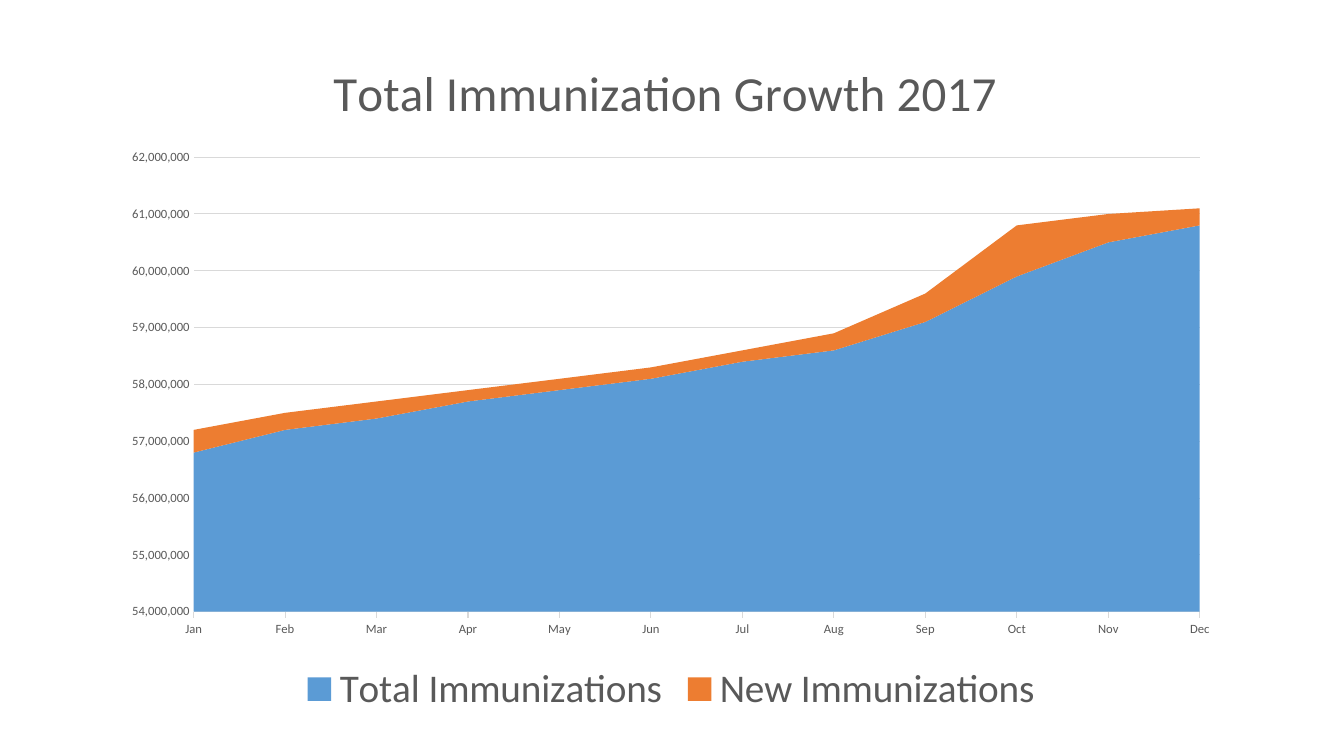
from lxml import etree
from pptx import Presentation
from pptx.chart.data import CategoryChartData
from pptx.dml.color import RGBColor
from pptx.enum.chart import XL_CHART_TYPE, XL_LEGEND_POSITION, XL_TICK_MARK
from pptx.oxml.ns import qn
from pptx.util import Inches, Pt

AREA_STACKED = XL_CHART_TYPE.AREA_STACKED
LEGEND_BOTTOM = XL_LEGEND_POSITION.BOTTOM
TICK_OUTSIDE, TICK_NONE = XL_TICK_MARK.OUTSIDE, XL_TICK_MARK.NONE

COLORS = {"text": "595959", "line": "D9D9D9", "total": "5B9BD5", "new": "ED7D31"}
MILLION = 1_000_000
CHART_WIDTH, CHART_HEIGHT = 11.13, 6.69

MONTHS = ["Jan", "Feb", "Mar", "Apr", "May", "Jun",
          "Jul", "Aug", "Sep", "Oct", "Nov", "Dec"]
# Name, colour and monthly values in millions
SERIES = [
    ("Total Immunizations", "total",
     [56.8, 57.2, 57.4, 57.7, 57.9, 58.1, 58.4, 58.6, 59.1, 59.9, 60.5, 60.8]),
    ("New Immunizations", "new",
     [0.4, 0.3, 0.3, 0.2, 0.2, 0.2, 0.2, 0.3, 0.5, 0.9, 0.5, 0.3]),
]


def style_font(font, size):
    font.name = "Calibri"
    font.size = Pt(size)
    font.bold = False
    font.color.rgb = RGBColor.from_string(COLORS["text"])


def place_part(part, index, settings):
    """Give a chart part a manual layout, as child number index."""
    for old_layout in part.findall(qn("c:layout")):
        part.remove(old_layout)
    layout = etree.Element(qn("c:layout"))
    manual_layout = etree.SubElement(layout, qn("c:manualLayout"))
    for tag, value in settings.items():
        etree.SubElement(manual_layout, qn(f"c:{tag}")).set("val", str(value))
    part.insert(index, layout)


presentation = Presentation()
presentation.slide_width = Inches(13.33)
presentation.slide_height = Inches(7.5)
slide = presentation.slides.add_slide(presentation.slide_layouts[6])

# Stacked area chart
chart_data = CategoryChartData(number_format="#,##0")
chart_data.categories = MONTHS
for name, color, millions in SERIES:
    chart_data.add_series(name, [round(value * MILLION) for value in millions])
chart = slide.shapes.add_chart(
    AREA_STACKED, Inches(1.09), Inches(0.46),
    Inches(CHART_WIDTH), Inches(CHART_HEIGHT), chart_data
).chart
style_font(chart.font, 10)
plot = chart.plots[0]
plot.vary_by_categories = False
for series, (name, color, millions) in zip(plot.series, SERIES):
    series.format.fill.solid()
    series.format.fill.fore_color.rgb = RGBColor.from_string(COLORS[color])
    series.format.line.fill.background()

# Title
chart.has_title = True
title_run = chart.chart_title.text_frame.paragraphs[0].add_run()
title_run.text = "Total Immunization Growth 2017"
style_font(title_run.font, 35)

# Legend
chart.has_legend = True
chart.legend.position = LEGEND_BOTTOM
chart.legend.include_in_layout = False
style_font(chart.legend.font, 28)

# Month axis
month_axis = chart.category_axis
month_axis.has_major_gridlines = False
month_axis.major_tick_mark = TICK_OUTSIDE

# Value axis
value_axis = chart.value_axis
value_axis.minimum_scale = 54 * MILLION
value_axis.maximum_scale = 62 * MILLION
value_axis.major_unit = MILLION
value_axis.major_tick_mark = TICK_NONE
value_axis.has_major_gridlines = True
value_axis.format.line.fill.background()
value_axis.tick_labels.number_format = "#,##0"
value_axis.tick_labels.number_format_is_linked = False

# Axis labels and lines
for axis in (month_axis, value_axis):
    axis.minor_tick_mark = TICK_NONE
    style_font(axis.tick_labels.font, 9)
for line in (month_axis.format.line, value_axis.major_gridlines.format.line):
    line.color.rgb = RGBColor.from_string(COLORS["line"])
    line.width = Pt(0.75)

# Places of title and plot, as shares of the chart
place_part(chart.chart_title._element, 1, {
    "xMode": "edge", "yMode": "edge",
    "x": 2.13 / CHART_WIDTH, "y": 0.03 / CHART_HEIGHT,
})
place_part(plot._element.getparent(), 0, {
    "layoutTarget": "inner", "xMode": "edge", "yMode": "edge",
    "x": 0.83 / CHART_WIDTH, "y": 1.1 / CHART_HEIGHT,
    "w": 9.98 / CHART_WIDTH, "h": 4.51 / CHART_HEIGHT,
})

presentation.save("out.pptx")
